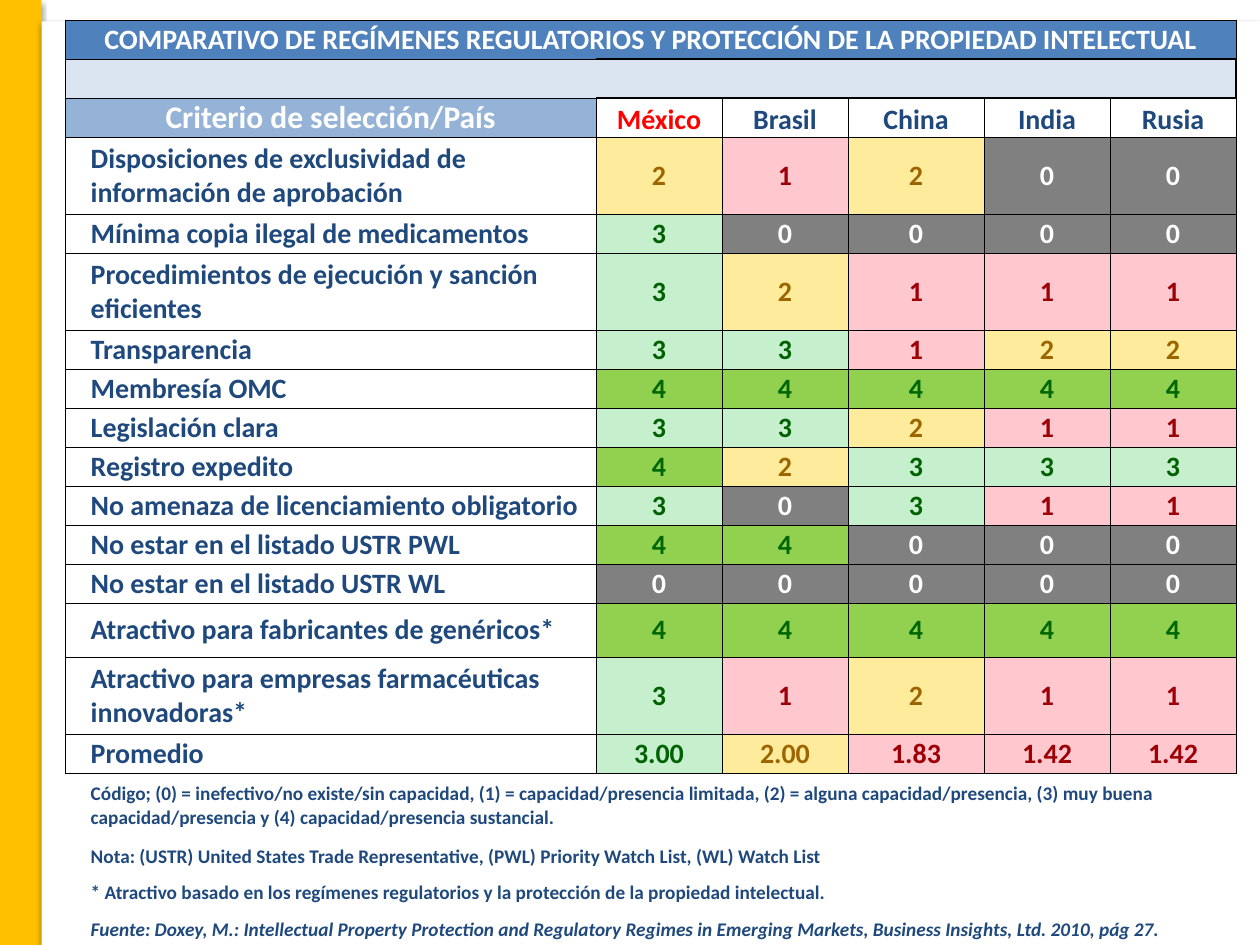
import lxml.etree
import pptx
import pptx.dml.color
import pptx.enum.shapes
import pptx.enum.text
import pptx.oxml
import pptx.oxml.ns
import pptx.util

FONT = "Calibri"
NAVY, WHITE, BLACK = "1F497D", "FFFFFF", "000000"
TITLE = "COMPARATIVO DE REGÍMENES REGULATORIOS Y PROTECCIÓN DE LA PROPIEDAD INTELECTUAL"
CRITERION = "Criterio de selección/País"
COUNTRIES = ["México", "Brasil", "China", "India", "Rusia"]
LINE, DOUBLE = 0.31, 0.61
CRITERIA = [  # label, scores by country, row height
    ("Disposiciones de exclusividad de información de aprobación", "2 1 2 0 0", DOUBLE),
    ("Mínima copia ilegal de medicamentos", "3 0 0 0 0", LINE),
    ("Procedimientos de ejecución y sanción eficientes", "3 2 1 1 1", DOUBLE),
    ("Transparencia", "3 3 1 2 2", LINE),
    ("Membresía OMC", "4 4 4 4 4", LINE),
    ("Legislación clara", "3 3 2 1 1", LINE),
    ("Registro expedito", "4 2 3 3 3", LINE),
    ("No amenaza de licenciamiento obligatorio", "3 0 3 1 1", LINE),
    ("No estar en el listado USTR PWL", "4 4 0 0 0", LINE),
    ("No estar en el listado USTR WL", "0 0 0 0 0", LINE),
    ("Atractivo para fabricantes de genéricos*", "4 4 4 4 4", 0.43),
    ("Atractivo para empresas farmacéuticas innovadoras*", "3 1 2 1 1", DOUBLE),
    ("Promedio", "3.00 2.00 1.83 1.42 1.42", LINE),
]
NOTES = [  # text, row height, italic
    ("Código; (0) = inefectivo/no existe/sin capacidad, (1) = capacidad/presencia limitada, "
     "(2) = alguna capacidad/presencia, (3) muy buena capacidad/presencia y "
     "(4) capacidad/presencia sustancial.", 0.52, False),
    ("Nota: (USTR) United States Trade Representative, (PWL) Priority Watch List, "
     "(WL) Watch List", 0.29, False),
    ("* Atractivo basado en los regímenes regulatorios y la protección de la propiedad "
     "intelectual.", 0.28, False),
    ("Fuente: Doxey, M.: Intellectual Property Protection and Regulatory Regimes in Emerging "
     "Markets, Business Insights, Ltd. 2010, pág 27.", LINE, True),
]
SCORE_COLORS = [  # text and fill, indexed by whole score
    (WHITE, "808080"), ("9C0006", "FFC7CE"), ("9C6500", "FFEB9C"),
    ("006100", "C6EFCE"), ("006600", "92D050"),
]
COLUMNS = [4.21, 1, 1, 1.08, 1, 1]
ROWS = [LINE] * 3 + [c[2] for c in CRITERIA] + [n[1] for n in NOTES]
GRID = dict(L=0.5, R=0.5, T=0.5, B=0.5)
CENTER = pptx.enum.text.PP_ALIGN.CENTER
inch = pptx.util.Inches


def rgb(color):
    return pptx.dml.color.RGBColor.from_string(color)


def add_panel(slide, left, top, width, height, color):
    """Add a borderless rectangle with a soft shadow below it."""
    sp = slide.shapes.add_shape(pptx.enum.shapes.MSO_SHAPE.RECTANGLE,
                                inch(left), inch(top), inch(width), inch(height))
    sp.fill.solid()
    sp.fill.fore_color.rgb = rgb(color)
    sp.line.fill.background()
    sp._element.spPr.append(pptx.oxml.parse_xml(
        f'<a:effectLst {pptx.oxml.ns.nsdecls("a")}>'
        '<a:outerShdw blurRad="39370" dist="22860" dir="5400000" rotWithShape="0">'
        f'<a:srgbClr val="{BLACK}"><a:alpha val="35000"/></a:srgbClr>'
        '</a:outerShdw></a:effectLst>'))


def style_cell(cell, fill=None, borders=GRID):
    """Set margins, fill and the border widths given by side (absent side: no line)."""
    cell.margin_left = cell.margin_right = cell.margin_top = cell.margin_bottom = 0
    cell.vertical_anchor = pptx.enum.text.MSO_ANCHOR.MIDDLE
    tc_pr = cell._tc.get_or_add_tcPr()
    for side in "LRTB":
        ln = lxml.etree.SubElement(tc_pr, pptx.oxml.ns.qn(f"a:ln{side}"))
        if side in borders:
            ln.set("w", str(pptx.util.Pt(borders[side])))
            solid = lxml.etree.SubElement(ln, pptx.oxml.ns.qn("a:solidFill"))
            lxml.etree.SubElement(solid, pptx.oxml.ns.qn("a:srgbClr"), val=BLACK)
        else:
            lxml.etree.SubElement(ln, pptx.oxml.ns.qn("a:noFill"))
    if fill:
        cell.fill.solid()
        cell.fill.fore_color.rgb = rgb(fill)
    else:
        cell.fill.background()


def write(cell, text, color=NAVY, size=16, align=None, italic=None):
    """Write bold text; without an alignment it is indented from the left."""
    cell.text_frame.text = text
    p = cell.text_frame.paragraphs[0]
    if align is None:
        p._p.get_or_add_pPr().set("marL", str(inch(0.2)))
        p._p.get_or_add_pPr().set("indent", "0")
    else:
        p.alignment = align
    font = p.runs[0].font
    font.name, font.size, font.bold = FONT, pptx.util.Pt(size), True
    font.color.rgb = rgb(color)
    if italic:
        font.italic = True


def merge_row(table, row, fill, borders):
    for cell in table.rows[row].cells:
        style_cell(cell, fill, borders)
    table.cell(row, 0).merge(table.cell(row, len(COLUMNS) - 1))
    return table.cell(row, 0)


def fill_header(table):
    write(merge_row(table, 0, "4F81BD", GRID), TITLE, WHITE, align=CENTER)
    last = len(COLUMNS) - 1
    for col in range(len(COLUMNS)):
        borders = dict(T=1, B=1)
        if col == 0:
            borders = dict(L=0.5, T=0.5, B=0.5)
        elif col == last:
            borders["R"] = 1
        style_cell(table.cell(1, col), "DBE5F1", borders)
    style_cell(table.cell(2, 0), "95B3D7")
    write(table.cell(2, 0), CRITERION, WHITE, 18, CENTER)
    for col, country in enumerate(COUNTRIES, 1):
        cell = table.cell(2, col)
        style_cell(cell, borders=dict(GRID, T=1))
        cell.vertical_anchor = pptx.enum.text.MSO_ANCHOR.BOTTOM
        write(cell, country, "FF0000" if col == 1 else NAVY, align=CENTER)


def fill_scores(table):
    for row, (label, scores, _) in enumerate(CRITERIA, 3):
        style_cell(table.cell(row, 0))
        write(table.cell(row, 0), label)
        for col, score in enumerate(scores.split(), 1):
            color, fill = SCORE_COLORS[int(float(score))]
            style_cell(table.cell(row, col), fill)
            write(table.cell(row, col), score, color, align=CENTER)


def fill_notes(table):
    first = 3 + len(CRITERIA)
    for row, (text, _, italic) in enumerate(NOTES, first):
        borders = dict(T=0.5) if row == first else {}
        write(merge_row(table, row, None, borders), text, size=11, italic=italic)


def main():
    prs = pptx.Presentation()
    prs.slide_width, prs.slide_height = inch(10), inch(7.5)
    s = prs.slides.add_slide(prs.slide_layouts[6])
    add_panel(s, 0, 0, 0.33, 7.5, "FFC000")
    add_panel(s, 0.33, 0.17, 9.67, 7.33, WHITE)

    table = s.shapes.add_table(len(ROWS), len(COLUMNS), inch(0.52), inch(0.16),
                               inch(sum(COLUMNS)), inch(sum(ROWS))).table
    table.first_row = table.horz_banding = False
    for column, width in zip(table.columns, COLUMNS):
        column.width = inch(width)
    for row, height in zip(table.rows, ROWS):
        row.height = inch(height)
    fill_header(table)
    fill_scores(table)
    fill_notes(table)
    prs.save("out.pptx")


if __name__ == "__main__":
    main()
